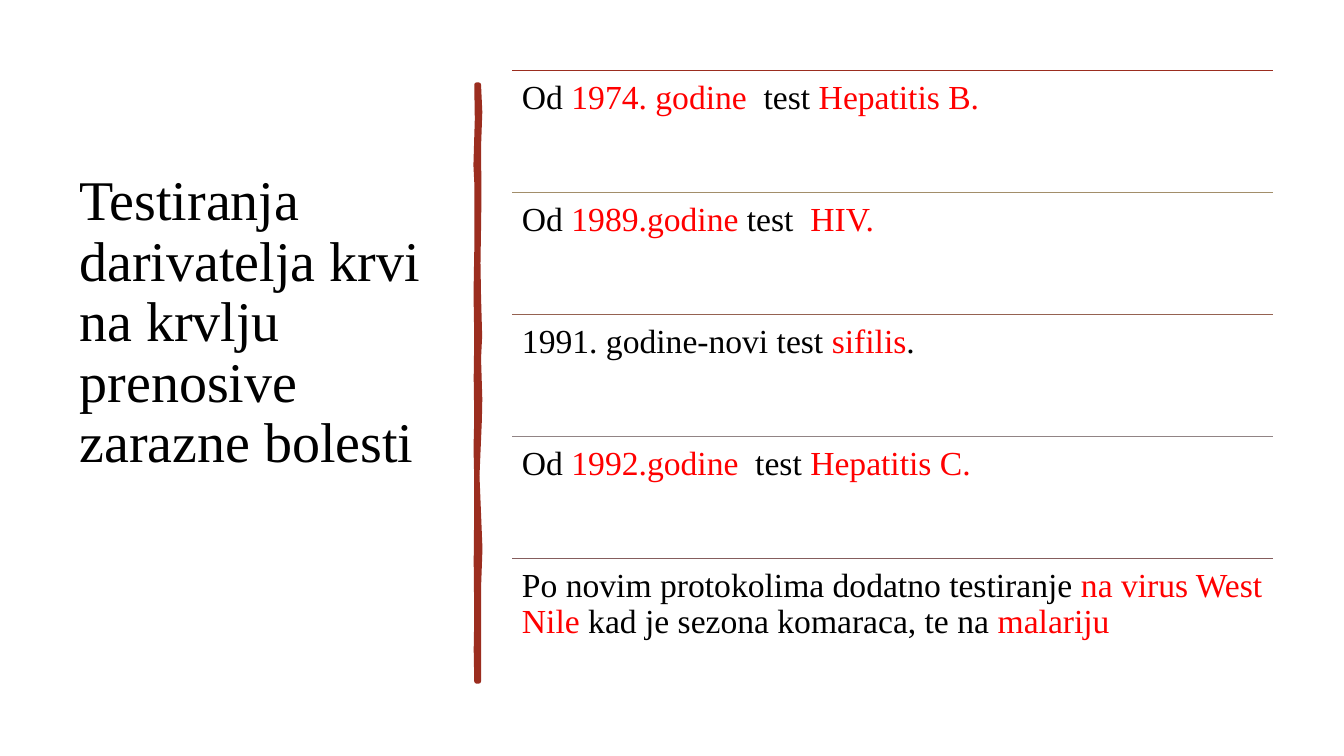
from lxml import etree
from pptx import Presentation
from pptx.dml.color import RGBColor
from pptx.enum.shapes import MSO_CONNECTOR as CONN
from pptx.enum.text import MSO_ANCHOR as ANCHOR, MSO_AUTO_SIZE as AUTO, PP_ALIGN as ALIGN
from pptx.oxml.ns import qn
from pptx.util import Pt

BLACK = RGBColor(0x00, 0x00, 0x00)
RED = RGBColor(0xFF, 0x00, 0x00)
RUST = RGBColor(0x9B, 0x2D, 0x1F)
SAND = RGBColor(0xA2, 0x8E, 0x6A)
CLAY = RGBColor(0x95, 0x62, 0x51)
GREY = RGBColor(0x91, 0x84, 0x85)
MAUVE = RGBColor(0x85, 0x5D, 0x5D)

LEFT, TOP, WIDTH, STEP = 365.76, 50.4, 543.6, 87.12

# Rule colour, then the runs of the row
TESTS = [
    (RUST, [("Od ", BLACK), ("1974. godine ", RED), (" test ", BLACK), ("Hepatitis B.", RED)]),
    (SAND, [("Od ", BLACK), ("1989.godine ", RED), ("test  ", BLACK), ("HIV.", RED)]),
    (CLAY, [("1991. godine-novi test ", BLACK), ("sifilis", RED), (".", BLACK)]),
    (GREY, [("Od ", BLACK), ("1992.godine ", RED), (" test ", BLACK), ("Hepatitis C.", RED)]),
    (MAUVE, [("Po novim protokolima dodatno testiranje ", BLACK), ("na virus West Nile ", RED),
             ("kad je sezona komaraca, te na ", BLACK), ("malariju", RED)]),
]

# Brush stroke: down the right edge, then up the left edge
STROKE = [
    (342, 60.5), (342.9, 80), (342, 105), (342.3, 140), (342, 163), (341.6, 188),
    (342, 212), (342.8, 240), (342, 256), (342.9, 285), (342.6, 300), (342, 314),
    (340.9, 340), (342, 367), (343, 392), (342, 420), (342, 486.7),
    (340.4, 486.7), (340, 464), (340.4, 441), (340, 401), (340.3, 372), (340.4, 343),
    (339.9, 320), (340.4, 299), (340, 270), (340.4, 241), (339.9, 210), (340.4, 180),
    (340.4, 130), (339.8, 118), (340.8, 85), (340.4, 60.5),
]


class Deck:
    def __init__(self, font):
        self.font = font
        self.prs = Presentation()
        self.prs.slide_width, self.prs.slide_height = Pt(960), Pt(540)
        self.s = self.prs.slides.add_slide(self.prs.slide_layouts[5])

    def fill_text(self, tf, runs, size, anchor):
        tf.word_wrap = True
        tf.auto_size = AUTO.NONE
        tf.vertical_anchor = anchor
        p = tf.paragraphs[0]
        p.alignment = ALIGN.LEFT
        p.line_spacing = 0.9
        for text, color in runs:
            r = p.add_run()
            r.text = text
            r.font.name, r.font.size = self.font, Pt(size)
            r.font.color.rgb = color

    def title(self, text, x, y, w, h):
        sp = self.s.shapes.title
        sp.left, sp.top, sp.width, sp.height = Pt(x), Pt(y), Pt(w), Pt(h)
        self.fill_text(sp.text_frame, [(text, BLACK)], 40, ANCHOR.MIDDLE)

    def text(self, runs, x, y, w, h):
        tf = self.s.shapes.add_textbox(Pt(x), Pt(y), Pt(w), Pt(h)).text_frame
        tf.margin_left = tf.margin_right = tf.margin_top = tf.margin_bottom = Pt(7.2)
        self.fill_text(tf, runs, 24, ANCHOR.TOP)

    def rule(self, x, y, w, color):
        line = self.s.shapes.add_connector(CONN.STRAIGHT, Pt(x), Pt(y), Pt(x + w), Pt(y))
        line.line.color.rgb = color
        line.line.width = Pt(1)
        etree.SubElement(line._element.spPr, qn("a:effectLst"))

    def brush(self, points, color):
        points = [(Pt(x), Pt(y)) for x, y in points]
        fb = self.s.shapes.build_freeform(*points[0])
        fb.add_line_segments(points[1:], close=True)
        sp = fb.convert_to_shape()
        sp.shadow.inherit = False
        sp.fill.solid()
        sp.fill.fore_color.rgb = color
        sp.line.color.rgb = color
        sp.line.width = Pt(3.25)
        etree.SubElement(sp.line._get_or_add_ln(), qn("a:round"))


def main():
    deck = Deck("Times New Roman")
    deck.title("Testiranja darivatelja krvi na krvlju prenosive zarazne bolesti",
               49.68, 50.4, 269.28, 361.44)
    deck.brush(STROKE, RUST)
    for i, (color, runs) in enumerate(TESTS):
        y = TOP + i * STEP
        deck.rule(LEFT, y, WIDTH, color)
        deck.text(runs, LEFT, y, WIDTH, STEP)
    deck.prs.save("out.pptx")


if __name__ == "__main__":
    main()
